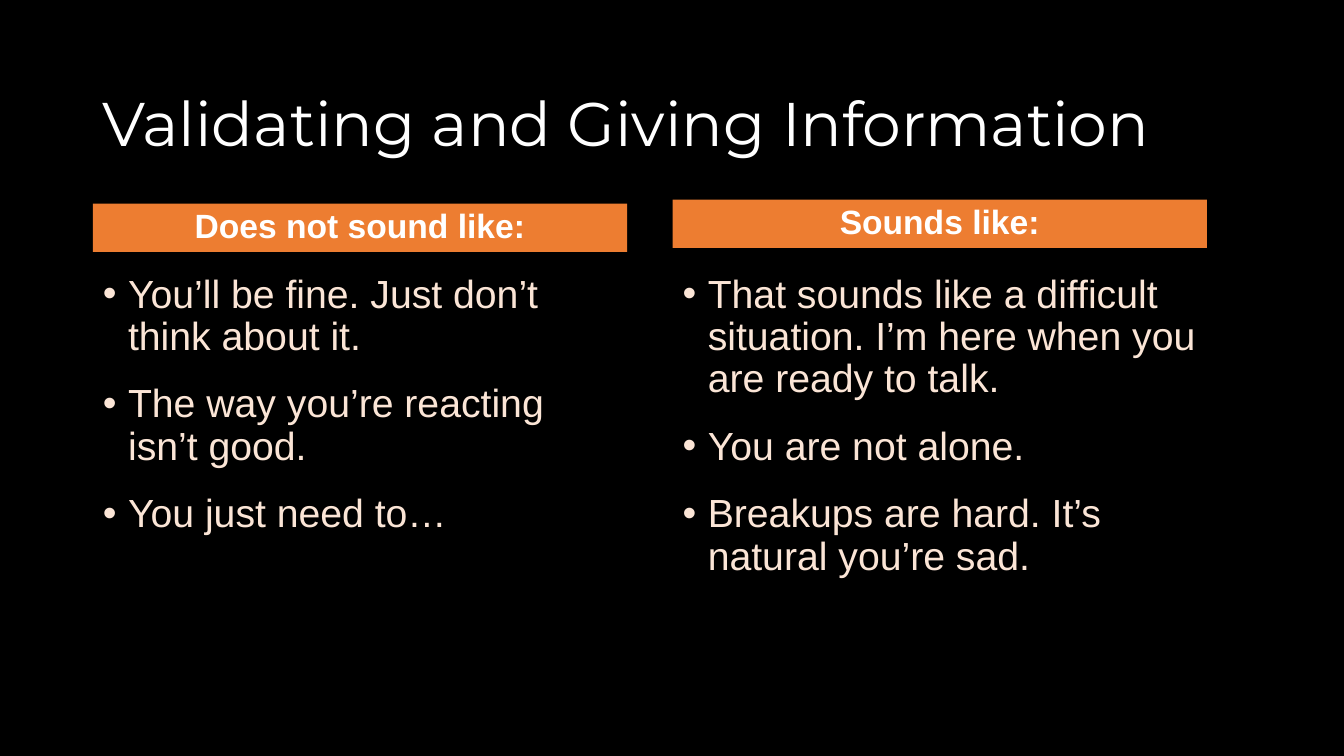
from pptx import Presentation
from pptx.dml.color import RGBColor
from pptx.enum.text import MSO_ANCHOR, MSO_AUTO_SIZE, PP_ALIGN
from pptx.util import Emu, Pt

PX = 9144
BLACK = RGBColor(0x00, 0x00, 0x00)
WHITE = RGBColor(0xFF, 0xFF, 0xFF)
ORANGE = RGBColor(0xED, 0x7D, 0x31)
CREAM = RGBColor(0xFB, 0xE5, 0xD6)

TITLE_FONT = {"name": "Montserrat", "size": Pt(44), "bold": False}
HEADING_FONT = {"name": "Arial", "size": Pt(24), "bold": True}
LIST_FONT = {"name": "Arial", "size": Pt(28), "bold": False}

TITLE_PARA = {"alignment": PP_ALIGN.LEFT, "line_spacing": 0.9, "space_before": Pt(0)}
HEADING_PARA = {"alignment": PP_ALIGN.CENTER, "line_spacing": 0.9, "space_before": Pt(10)}
LIST_PARA = {"alignment": PP_ALIGN.LEFT, "line_spacing": 0.9, "space_before": Pt(18)}

COLUMN_WIDTH = 530
LIST_TOP = 267
HEADING_HEIGHT = 48
COLUMNS = [
    {
        "left": 92, "heading_top": 202, "list_height": 337,
        "heading": "Does not sound like:",
        "lines": [
            "You’ll be fine. Just don’t think about it.",
            "The way you’re reacting isn’t good.",
            "You just need to…",
        ],
    },
    {
        "left": 667, "heading_top": 198, "list_height": 343,
        "heading": "Sounds like:",
        "lines": [
            "That sounds like a difficult situation. I’m here when you are ready to talk.",
            "You are not alone.",
            "Breakups are hard. It’s natural you’re sad.",
        ],
    },
]


def set_all(target, values):
    for name, value in values.items():
        setattr(target, name, value)


def fill_placeholder(holder, box, lines, anchor, para_format, font_format, color):
    for side, length in zip(("left", "top", "width", "height"), box):
        setattr(holder, side, Emu(length * PX))
    frame = holder.text_frame
    frame.text = "\n".join(lines)
    set_all(frame, {
        "word_wrap": True,
        "auto_size": MSO_AUTO_SIZE.NONE,
        "vertical_anchor": anchor,
    })
    for para in frame.paragraphs:
        set_all(para, para_format)
        for span in para.runs:
            set_all(span.font, font_format)
            span.font.color.rgb = color


def add_title(holder, box):
    fill_placeholder(holder, box, ["Validating and Giving Information"],
                     MSO_ANCHOR.MIDDLE, TITLE_PARA, TITLE_FONT, WHITE)


def add_heading(holder, box, text):
    fill_placeholder(holder, box, [text],
                     MSO_ANCHOR.MIDDLE, HEADING_PARA, HEADING_FONT, WHITE)
    holder.fill.solid()
    holder.fill.fore_color.rgb = ORANGE


def add_list(holder, box, lines):
    fill_placeholder(holder, box, lines,
                     MSO_ANCHOR.TOP, LIST_PARA, LIST_FONT, CREAM)
    for para in holder.text_frame.paragraphs:
        properties = para._p.get_or_add_pPr()
        properties.set("marL", str(25 * PX))
        properties.set("indent", str(-25 * PX))


def add_column(heading, body, column):
    left = column["left"]
    add_heading(heading, (left, column["heading_top"], COLUMN_WIDTH, HEADING_HEIGHT),
                column["heading"])
    add_list(body, (left, LIST_TOP, COLUMN_WIDTH, column["list_height"]),
             column["lines"])


def main():
    deck = Presentation()
    deck.slide_width, deck.slide_height = Emu(1333 * PX), Emu(750 * PX)
    page = deck.slides.add_slide(deck.slide_layouts.get_by_name("Comparison"))
    page.background.fill.solid()
    page.background.fill.fore_color.rgb = BLACK
    title, *holders = page.placeholders
    add_title(title, (92, 76, 1150, 100))
    for heading, body, column in zip(holders[::2], holders[1::2], COLUMNS):
        add_column(heading, body, column)
    deck.save("out.pptx")


if __name__ == "__main__":
    main()
